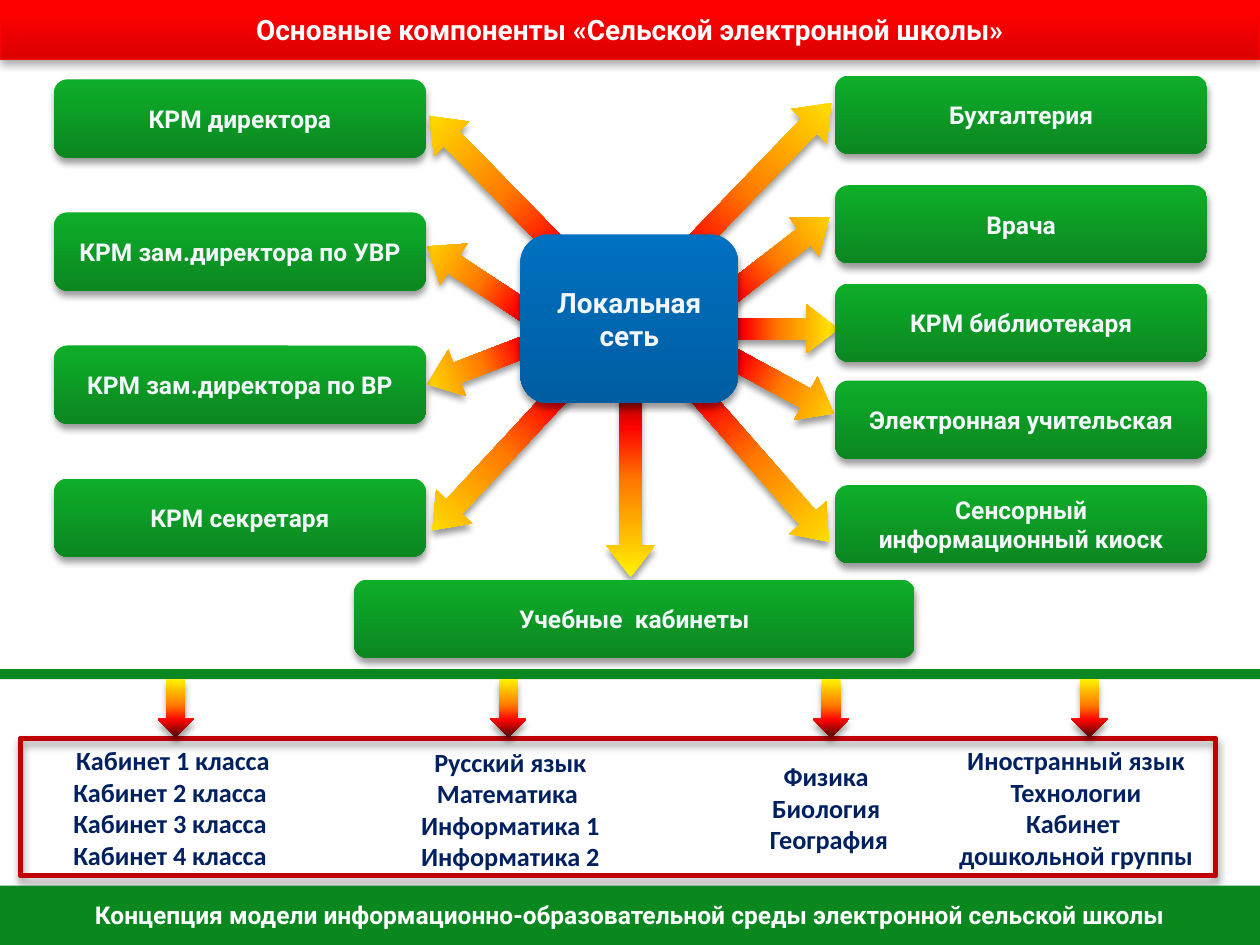
from lxml import etree
from pptx import Presentation
from pptx.dml.color import RGBColor
from pptx.enum.shapes import MSO_SHAPE as Preset
from pptx.enum.text import MSO_ANCHOR as Anchor, PP_ALIGN as Align
from pptx.oxml.ns import qn
from pptx.util import Inches, Pt

WHITE = RGBColor(0xFF, 0xFF, 0xFF)
BLACK = RGBColor(0x00, 0x00, 0x00)
PALE = RGBColor(0xF3, 0xF7, 0xFB)
NAVY = RGBColor(0x00, 0x20, 0x60)
RED = RGBColor(0xFF, 0x00, 0x00)
DEEP_RED = RGBColor(0xDA, 0x00, 0x00)
FRAME_RED = RGBColor(0xC0, 0x00, 0x00)
GREEN = RGBColor(0x0B, 0x87, 0x20)
LIGHT_GREEN = RGBColor(0x0E, 0xAE, 0x29)
BLUE = RGBColor(0x00, 0x70, 0xC0)
DARK_BLUE = RGBColor(0x00, 0x5D, 0xA2)

GREEN_STOPS = [(0, LIGHT_GREEN), (100, GREEN)]
BLUE_STOPS = [(0, BLUE), (100, DARK_BLUE)]
TITLE_STOPS = [(0, DEEP_RED), (80, RED), (100, RED)]
FIRE_STOPS = [(0, RGBColor(0xFF, 0xF2, 0x00)), (45, RGBColor(0xFF, 0x7A, 0x00)),
              (70, RGBColor(0xFF, 0x03, 0x00)), (100, RGBColor(0x4D, 0x08, 0x08))]
DOWNWARD, UPWARD = 90, 270

BOX_WIDTH, BOX_HEIGHT = 2.95, 0.62
LEFT_X, RIGHT_X = 0.43, 6.63
LEFT_TOP, LEFT_STEP = 0.63, 1.056
LEFT_BOXES = ["КРМ директора", "КРМ зам.директора по УВР",
              "КРМ зам.директора по ВР", "КРМ секретаря"]
RIGHT_BOXES = [(0.6, "Бухгалтерия"), (1.47, "Врача"), (2.25, "КРМ библиотекаря"),
               (3.02, "Электронная учительская"),
               (3.85, "Сенсорный информационный киоск")]

# Arrows from the network: left, top, length, rotation
ARROW_WIDTH = 0.39
NETWORK_ARROWS = [
    (5.72, 2.54, 2.01, 318.7), (5.94, 2.47, 1.1, 298.4), (5.89, 1.48, 1.26, 232.2),
    (5.93, 2.08, 1.06, 270), (5.64, 0.51, 2.2, 223.9), (4.81, 2.89, 1.69, 0),
    (3.88, 2.57, 1.89, 42.9), (3.69, 2.33, 1.06, 69), (3.9, 0.64, 1.97, 135.7),
    (3.67, 1.7, 1.14, 123.5)]

# Classroom columns: arrow left, text left, text top, text (\v is a line break)
CLASSROOMS = [
    (1.25, -0.21, 5.9, " Кабинет 1 класса\nКабинет 2 класса\nКабинет 3 класса\nКабинет 4 класса"),
    (3.89, 2.49, 5.91, "Русский язык\vМатематика \vИнформатика 1\vИнформатика 2"),
    (6.45, 5.02, 5.9, "Физика \vБиология \vГеография"),
    (8.5, 6.98, 5.9, "Иностранный язык\vТехнологии\vКабинет \vдошкольной группы")]


def set_gradient(shape, stops, angle):
    shape.fill.gradient()
    gradient = shape._element.spPr.find(qn("a:gradFill"))
    stop_list = gradient.find(qn("a:gsLst"))
    for stop in list(stop_list):
        stop_list.remove(stop)
    for position, color in stops:
        stop = etree.SubElement(stop_list, qn("a:gs"), pos=str(position * 1000))
        etree.SubElement(stop, qn("a:srgbClr"), val=str(color))
    gradient.find(qn("a:lin")).set("ang", str(angle * 60000))


def set_shadow(shape, opacity=40, blur=4, distance=3):
    shape.shadow.inherit = False
    effects = shape._element.spPr.find(qn("a:effectLst"))
    shadow = etree.SubElement(effects, qn("a:outerShdw"), blurRad=str(Pt(blur)),
                              dist=str(Pt(distance)), dir="5400000", rotWithShape="0")
    color = etree.SubElement(shadow, qn("a:srgbClr"), val=str(BLACK))
    etree.SubElement(color, qn("a:alpha"), val=str(opacity * 1000))


def set_text(shape, text, size, color, font_name="Roboto"):
    frame = shape.text_frame
    frame.text = text
    frame.word_wrap = True
    frame.vertical_anchor = Anchor.MIDDLE
    for paragraph in frame.paragraphs:
        paragraph.alignment = Align.CENTER
        for run in paragraph.runs:
            run.font.name = font_name
            run.font.size = Pt(size)
            run.font.bold = True
            run.font.color.rgb = color


def place(shape, left, top, width, height):
    shape.left, shape.top = Inches(left), Inches(top)
    shape.width, shape.height = Inches(width), Inches(height)


def add_plain_shape(slide, preset, left, top, width, height):
    shape = slide.shapes.add_shape(preset, Inches(left), Inches(top),
                                   Inches(width), Inches(height))
    shape.shadow.inherit = False
    shape.line.fill.background()
    return shape


def add_band(slide, top, height):
    band = add_plain_shape(slide, Preset.RECTANGLE, 0, top, 10, height)
    band.fill.solid()
    band.fill.fore_color.rgb = GREEN
    return band


def add_box(slide, left, top, width, height, text, size=14, stops=GREEN_STOPS):
    box = add_plain_shape(slide, Preset.FLOWCHART_ALTERNATE_PROCESS,
                          left, top, width, height)
    set_gradient(box, stops, DOWNWARD)
    set_shadow(box)
    set_text(box, text, size, PALE)


def add_arrow(slide, left, top, width, length, angle):
    arrow = add_plain_shape(slide, Preset.DOWN_ARROW, left, top, width, length)
    set_gradient(arrow, FIRE_STOPS, angle)
    set_shadow(arrow)
    return arrow


def add_network_arrow(slide, left, top, length, rotation):
    arrow = add_arrow(slide, left, top, ARROW_WIDTH, length, UPWARD)
    arrow.adjustments[0] = 0.44
    arrow.adjustments[1] = 0.65
    arrow.rotation = rotation


def add_text(slide, left, top, width, height, text, size, color, font_name="Roboto"):
    box = slide.shapes.add_textbox(Inches(left), Inches(top), Inches(width), Inches(height))
    set_text(box, text, size, color, font_name)
    return box


def format_title(slide):
    title = slide.shapes.title
    place(title, 0, 0, 10, 0.47)
    set_gradient(title, TITLE_STOPS, UPWARD)
    title.line.color.rgb = RED
    title.line.width = Pt(0.75)
    set_shadow(title, opacity=35, blur=5, distance=1.8)
    set_text(title, "Основные компоненты «Сельской электронной школы»", 16, WHITE)


def add_classrooms(slide):
    frame = add_plain_shape(slide, Preset.RECTANGLE, 0.16, 5.86, 9.49, 1.09)
    frame.fill.background()
    frame.line.color.rgb = FRAME_RED
    frame.line.width = Pt(3)
    set_shadow(frame)
    for arrow_left, text_left, top, text in CLASSROOMS:
        add_arrow(slide, arrow_left, 5.39, 0.29, 0.46, DOWNWARD)
        column = add_text(slide, text_left, top, 3.12, 1.02, text, 15, NAVY, "Calibri")
        column.text_frame.margin_left = column.text_frame.margin_right = Inches(0.04)


def main():
    presentation = Presentation()
    presentation.slide_width, presentation.slide_height = Inches(10), Inches(7.5)
    slide = presentation.slides.add_slide(presentation.slide_layouts[5])
    format_title(slide)

    # Local network with its arrows and workplaces
    for arrow in NETWORK_ARROWS:
        add_network_arrow(slide, *arrow)
    for row, text in enumerate(LEFT_BOXES):
        add_box(slide, LEFT_X, LEFT_TOP + row * LEFT_STEP, BOX_WIDTH, BOX_HEIGHT, text)
    for top, text in RIGHT_BOXES:
        add_box(slide, RIGHT_X, top, BOX_WIDTH, BOX_HEIGHT, text)
    add_box(slide, 2.81, 4.6, 4.45, BOX_HEIGHT, "Учебные  кабинеты")
    add_box(slide, 4.13, 1.86, 1.73, 1.34, "Локальная сеть", 16, BLUE_STOPS)

    # Classrooms under the divider
    add_band(slide, 5.31, 0.08)
    add_classrooms(slide)

    # Footer
    add_band(slide, 7.03, 0.47)
    add_text(slide, 0, 7.09, 10, 0.34,
             "Концепция модели информационно-образовательной среды "
             "электронной сельской школы", 14, WHITE)

    presentation.save("out.pptx")


if __name__ == "__main__":
    main()
